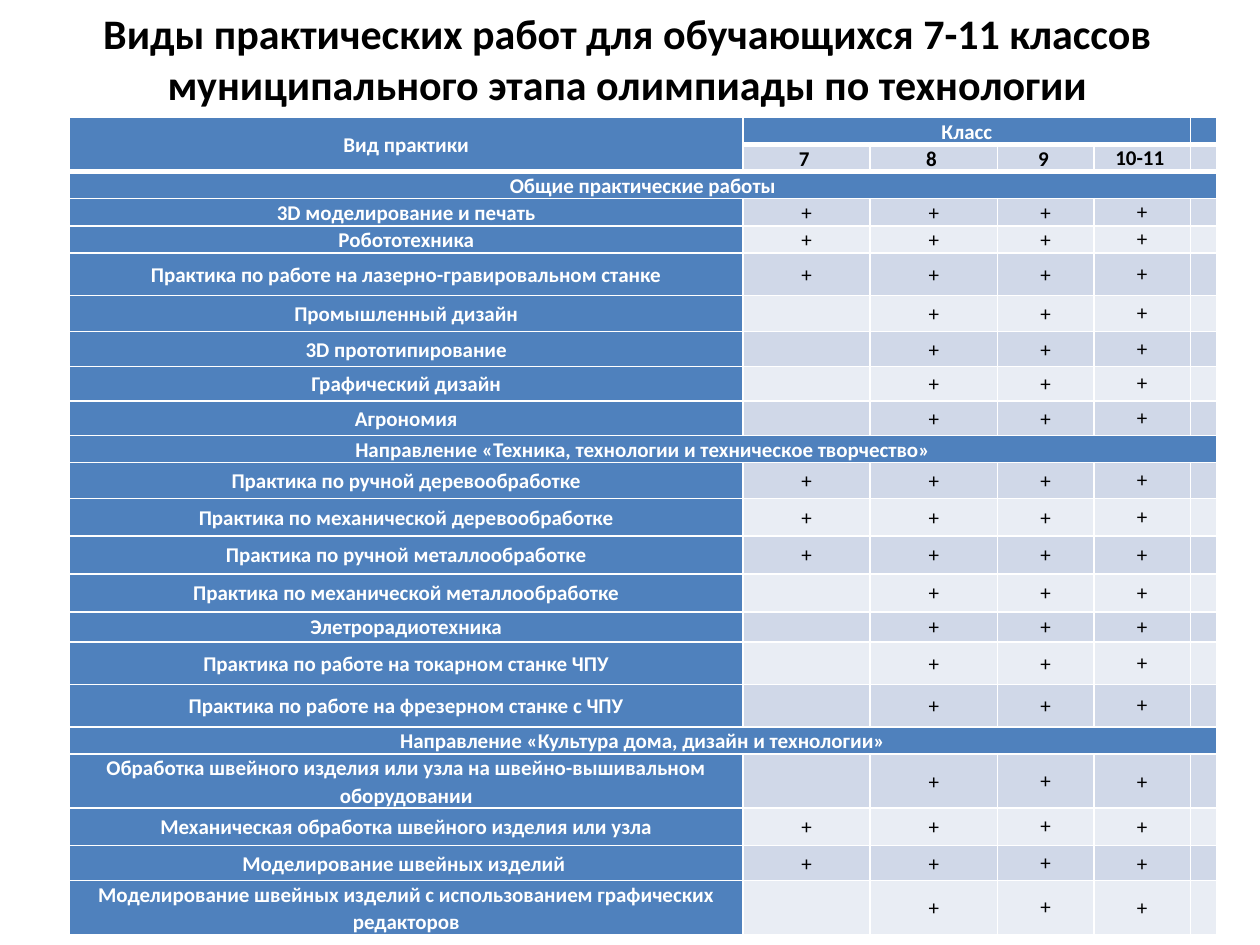
from lxml.etree import SubElement
from pptx import Presentation
from pptx.dml.color import RGBColor
from pptx.enum.text import MSO_ANCHOR, PP_ALIGN
from pptx.oxml.ns import qn
from pptx.util import Cm, Pt

BLACK = RGBColor(0x00, 0x00, 0x00)
WHITE = RGBColor(0xFF, 0xFF, 0xFF)
BLUE = RGBColor(0x4F, 0x81, 0xBD)
BAND_DARK = RGBColor(0xD0, 0xD8, 0xE8)
BAND_LIGHT = RGBColor(0xE9, 0xED, 0xF4)

TITLE = ("Виды практических работ для обучающихся 7-11 классов "
         "муниципального этапа олимпиады по технологии")
GRADES = ["7 ", "8 ", "9 ", "10-11 "]
COLUMN_WIDTHS = [13.58, 2.56, 2.57, 1.94, 1.95, 0.52]
HEADER_HEIGHT = 0.54

# Section: title, column with single line spacing,
# then practices as (name, first grade, row height in cm)
SECTIONS = [
    ("Общие практические работы", 4, [
        ("3D моделирование и печать", 7, 0.55),
        ("Робототехника", 7, 0.54),
        ("Практика по работе на лазерно-гравировальном станке", 7, 0.86),
        ("Промышленный дизайн", 8, 0.73),
        ("3D прототипирование", 8, 0.7),
        ("Графический дизайн", 8, 0.7),
        ("Агрономия", 8, 0.7),
    ]),
    ("Направление «Техника, технологии и техническое творчество»", 4, [
        ("Практика по ручной деревообработке", 7, 0.72),
        ("Практика по механической деревообработке", 7, 0.76),
        ("Практика по ручной металлообработке", 7, 0.76),
        ("Практика по механической металлообработке", 8, 0.77),
        ("Элетрорадиотехника", 8, 0.6),
        ("Практика по работе на токарном станке ЧПУ", 8, 0.86),
        ("Практика по работе на фрезерном станке с ЧПУ", 8, 0.86),
    ]),
    ("Направление «Культура дома, дизайн и технологии»", 3, [
        ("Обработка швейного изделия или узла на швейно-вышивальном "
         "оборудовании", 8, 1.08),
        ("Механическая обработка швейного изделия или узла", 7, 0.76),
        ("Моделирование швейных изделий ", 7, 0.7),
        ("Моделирование швейных изделий с использованием графических "
         "редакторов", 8, 1.08),
    ]),
]


class SlideBuilder:
    font_name = "Calibri"
    title_size = Pt(24)
    cell_size = Pt(12)
    line_spacing = 1.07

    def __init__(self, slide):
        self.slide = slide

    def set_text(self, paragraph, text, size, color, bold):
        paragraph.text = text
        paragraph.alignment = PP_ALIGN.CENTER
        font = paragraph.font
        font.name, font.size, font.bold = self.font_name, size, bold
        font.color.rgb = color

    def title(self, text, left, top, width, height):
        frame = self.slide.shapes.add_textbox(left, top, width, height).text_frame
        frame.word_wrap = True
        frame.vertical_anchor = MSO_ANCHOR.MIDDLE
        self.set_text(frame.paragraphs[0], text, self.title_size, BLACK, True)

    def table(self, left, top, widths, heights):
        table = self.slide.shapes.add_table(
            len(heights), len(widths), left, top,
            Cm(sum(widths)), Cm(sum(heights))).table
        table.first_row = table.horz_banding = False
        for column, width in zip(table.columns, widths):
            column.width = Cm(width)
        for row, height in zip(table.rows, heights):
            row.height = Cm(height)
        return table

    def cell(self, cell, text, fill, color=WHITE, bold=True, spaced=True, bottom=1):
        cell.margin_left = cell.margin_right = Cm(0.1)
        cell.margin_top = cell.margin_bottom = 0
        cell.vertical_anchor = MSO_ANCHOR.MIDDLE
        self.borders(cell, bottom)
        cell.fill.solid()
        cell.fill.fore_color.rgb = fill
        paragraph = cell.text_frame.paragraphs[0]
        self.set_text(paragraph, text, self.cell_size, color, bold)
        if spaced:
            paragraph.line_spacing = self.line_spacing
        if not text:
            # An empty paragraph takes its height from its end mark
            SubElement(paragraph._p, qn("a:endParaRPr"), sz=str(int(self.cell_size.pt * 100)))

    def borders(self, cell, bottom):
        properties = cell._tc.get_or_add_tcPr()
        for side, points in (("L", 1), ("R", 1), ("T", 1), ("B", bottom)):
            line = SubElement(properties, qn(f"a:ln{side}"), w=str(int(Pt(points))))
            color = SubElement(SubElement(line, qn("a:solidFill")), qn("a:srgbClr"))
            color.set("val", str(WHITE))


def fill_header(builder, table):
    last = len(GRADES) + 1
    for column in range(last + 1):
        text = {0: "Вид практики", 1: "Класс"}.get(column, "")
        builder.cell(table.cell(0, column), text, BLUE, bottom=3)
    builder.cell(table.cell(1, 0), "", BLUE, bottom=3)
    for column, grade in enumerate(GRADES + [""], start=1):
        builder.cell(table.cell(1, column), grade, BAND_DARK, BLACK,
                     spaced=column < last - 1)
    table.cell(0, 0).merge(table.cell(1, 0))
    table.cell(0, 1).merge(table.cell(0, last - 1))


def fill_sections(builder, table):
    last = len(GRADES) + 1
    row = 2
    for section, single_spaced, practices in SECTIONS:
        for column in range(last + 1):
            builder.cell(table.cell(row, column), "" if column else section, BLUE)
        table.cell(row, 0).merge(table.cell(row, last))
        for row, (name, first_grade, _) in enumerate(practices, start=row + 1):
            builder.cell(table.cell(row, 0), name, BLUE)
            band = BAND_DARK if row % 2 else BAND_LIGHT
            for column in range(1, last + 1):
                marked = first_grade - 6 <= column < last
                builder.cell(table.cell(row, column), "+" if marked else "", band,
                             BLACK, False, spaced=column != single_spaced)
        row += 1


def main():
    presentation = Presentation()
    presentation.slide_width, presentation.slide_height = Cm(25.4), Cm(19.05)
    builder = SlideBuilder(presentation.slides.add_slide(presentation.slide_layouts[6]))
    builder.title(TITLE, 0, 0, Cm(25.3), Cm(2.34))

    heights = [HEADER_HEIGHT] * 2
    for _, _, practices in SECTIONS:
        heights += [HEADER_HEIGHT] + [height for _, _, height in practices]
    table = builder.table(Cm(1.4), Cm(2.37), COLUMN_WIDTHS, heights)
    fill_header(builder, table)
    fill_sections(builder, table)
    presentation.save("out.pptx")


if __name__ == "__main__":
    main()
